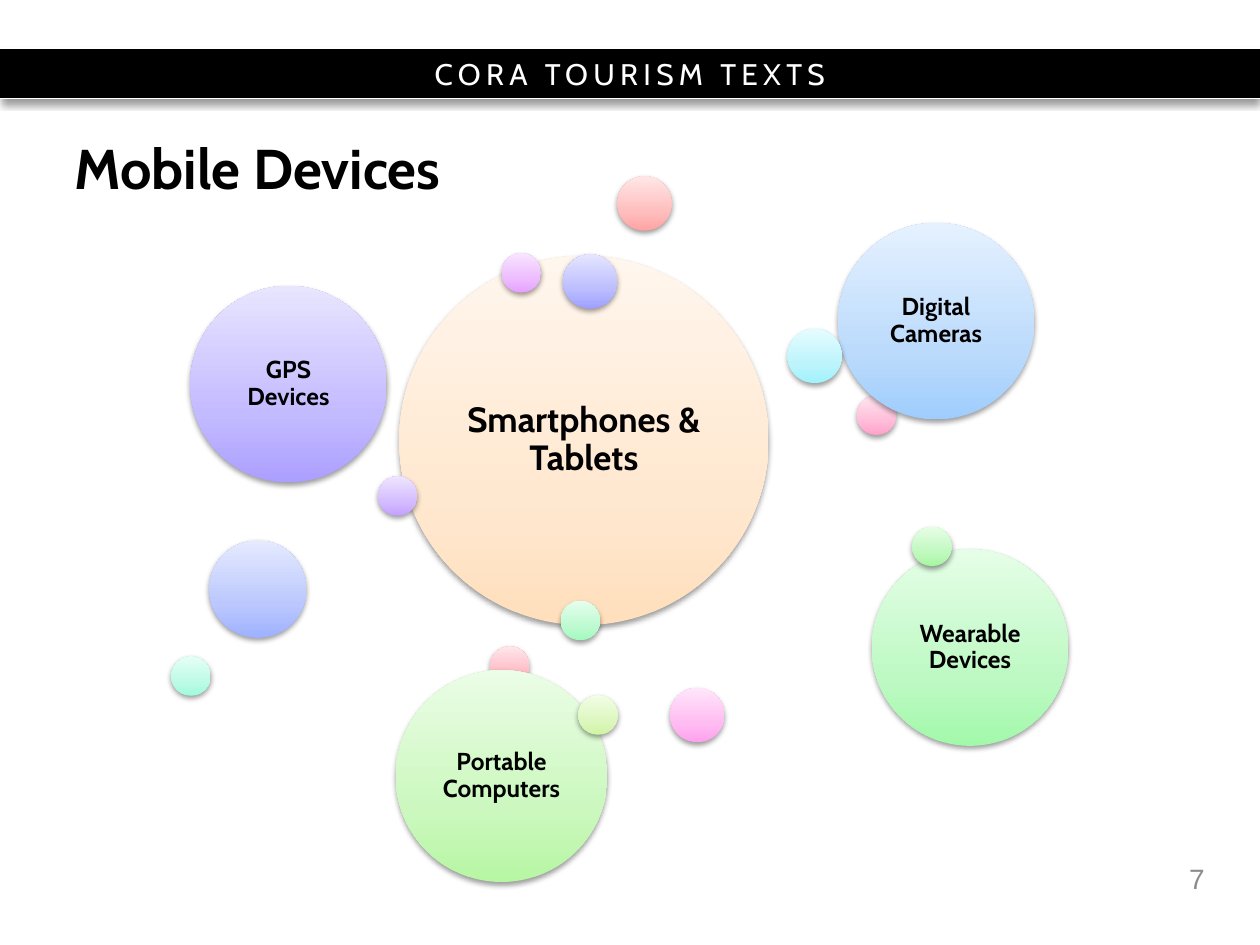
from dataclasses import dataclass

from lxml.etree import SubElement
from pptx import Presentation
from pptx.dml.color import RGBColor
from pptx.enum.shapes import MSO_CONNECTOR as Connector, MSO_SHAPE as Shape
from pptx.enum.text import MSO_ANCHOR as Anchor, PP_ALIGN as Align
from pptx.oxml.ns import qn
from pptx.util import Pt


@dataclass(frozen=True)
class Theme:
    font: str = "Cabin"
    number_font: str = "Arial"
    black: str = "000000"
    white: str = "FFFFFF"
    grey: str = "8C8C8C"
    title: int = 32
    main_label: int = 20
    banner: int = 17
    number: int = 16
    label: int = 14


THEME = Theme()
SLIDE_WIDTH, SLIDE_HEIGHT = 720, 540
BANNER_TOP, BANNER_HEIGHT = 27.4, 29

# Circle diameters
MAIN, LARGE, DEVICE, MEDIUM, SMALL, TINY = 211, 121, 112.3, 55.6, 31, 22.5

# left, top, diameter, gradient colours from bottom to top, label
CIRCLES = [
    (228.2, 146.2, MAIN, "FFDFBC FFE8D0 FFF6ED", "Smartphones & Tablets"),
    (352.8, 100.8, SMALL, "FFA3A3 FFBEBE FFE6E6", ""),
    (280.1, 369.4, TINY, "FFA2B0 FFBDC7 FFE6EA", ""),
    (489.6, 226.1, TINY, "FFA1CA FFBDD9 FFE6F0", ""),
    (383, 393.1, SMALL, "FFA1EE FFBCF2 FFE6FA", ""),
    (286.6, 144.7, TINY, "E6A0FF EDBCFF F8E5FF", ""),
    (216, 272.2, TINY, "C3A0FF D4BCFF EEE5FF", ""),
    (108.7, 163.4, DEVICE, "AB9FFF C3BBFF E8E5FF", "GPS Devices"),
    (321.8, 145.4, SMALL, "9FA0FF BBBDFE E5E5FF", ""),
    (119.5, 308.9, MEDIUM, "9EB1FF BCC8FD E5EAFF", ""),
    (478.8, 127.4, DEVICE, "9FCDFD BCDBFC E5F1FF", "Digital Cameras"),
    (450, 187.9, SMALL, "A0F2FC BDF4FC E5FCFF", ""),
    (97.9, 375.1, TINY, "A0FBDD BDFBE6 E5FFF6", ""),
    (320.4, 343.4, TINY, "A1FABE BEFAD1 E5FEED", ""),
    (498.2, 313.9, DEVICE, "A2F9AA BEF9C4 E5FEE7", "Wearable Devices"),
    (521.3, 301, TINY, "A6F7A2 C1F8BF E6FEE5", ""),
    (226.1, 383, LARGE, "B7F6A3 CCF8BF EBFDE6", "Portable Computers"),
    (330.5, 397.4, TINY, "D0F5A3 DDF7BF F2FDE6", ""),
]


def write(shape, text, size, align, color=THEME.black, font=THEME.font,
          bold=False, inset=0):
    """Put one formatted paragraph in a shape and return it."""
    frame = shape.text_frame
    frame.word_wrap = True
    frame.vertical_anchor = Anchor.MIDDLE
    frame.margin_left = frame.margin_right = Pt(inset)
    frame.margin_top = frame.margin_bottom = Pt(inset)
    paragraph = frame.paragraphs[0]
    paragraph.text = text
    paragraph.alignment = align
    paragraph.font.name = font
    paragraph.font.size = Pt(size)
    paragraph.font.bold = bold
    paragraph.font.color.rgb = RGBColor.from_string(color)
    return paragraph


def add_shadow(shape, opacity, blur, distance):
    """Replace the inherited shadow by a soft one straight below."""
    shape.shadow.inherit = False
    effects = shape.element.spPr.find(qn("a:effectLst"))
    shadow = SubElement(effects, qn("a:outerShdw"), blurRad=str(Pt(blur)),
                        dist=str(Pt(distance)), dir="5400000", rotWithShape="0")
    color = SubElement(shadow, qn("a:srgbClr"), val=THEME.black)
    SubElement(color, qn("a:alpha"), val=str(opacity * 1000))


def fill_gradient(shape, colors):
    """Fill a new shape with three stops running upwards."""
    gradient = SubElement(shape.element.spPr, qn("a:gradFill"), rotWithShape="1")
    stops = SubElement(gradient, qn("a:gsLst"))
    for position, color in zip((0, 35, 100), colors):
        stop = SubElement(stops, qn("a:gs"), pos=str(position * 1000))
        SubElement(stop, qn("a:srgbClr"), val=color)
    SubElement(gradient, qn("a:lin"), ang="16200000", scaled="0")


def add_rule(slide, y):
    rule = slide.shapes.add_connector(Connector.STRAIGHT, 0, Pt(y), Pt(SLIDE_WIDTH), Pt(y))
    rule.line.color.rgb = RGBColor.from_string(THEME.white)
    rule.line.width = Pt(0.75)
    SubElement(rule.element.spPr, qn("a:effectLst"))


def add_banner(slide, text):
    banner = slide.shapes.add_shape(Shape.RECTANGLE, 0, Pt(BANNER_TOP),
                                    Pt(SLIDE_WIDTH), Pt(BANNER_HEIGHT))
    banner.fill.solid()
    banner.fill.fore_color.rgb = RGBColor.from_string(THEME.black)
    banner.line.fill.background()
    add_shadow(banner, opacity=40, blur=4, distance=3)
    paragraph = write(banner, text, THEME.banner, Align.CENTER, THEME.white)
    paragraph.runs[0].font._element.set("spc", "300")
    for y in (BANNER_TOP, BANNER_TOP + BANNER_HEIGHT):
        add_rule(slide, y)


def set_title(slide, text):
    title = slide.shapes.title
    title.left, title.top, title.width, title.height = Pt(35.3), Pt(81.4), Pt(653.8), Pt(34.6)
    paragraph = write(title, text, THEME.title, Align.LEFT, bold=True)
    paragraph.line_spacing = Pt(THEME.title)
    title.text_frame.margin_left = title.text_frame.margin_right = Pt(7.2)


def add_circle(slide, left, top, diameter, colors, label):
    circle = slide.shapes.add_shape(Shape.OVAL, Pt(left), Pt(top), Pt(diameter), Pt(diameter))
    fill_gradient(circle, colors.split())
    circle.line.fill.background()
    add_shadow(circle, opacity=38, blur=3.1, distance=1.6)
    if label:
        size = THEME.main_label if diameter == MAIN else THEME.label
        paragraph = write(circle, label, size, Align.CENTER, bold=True, inset=size * 0.3)
        paragraph.line_spacing = 0.9


def add_slide_number(slide, number):
    box = slide.shapes.add_textbox(Pt(520.6), Pt(487.4), Pt(167.8), Pt(28.8))
    write(box, number, THEME.number, Align.RIGHT, THEME.grey, THEME.number_font)


def main():
    deck = Presentation()
    deck.slide_width, deck.slide_height = Pt(SLIDE_WIDTH), Pt(SLIDE_HEIGHT)
    slide = deck.slides.add_slide(deck.slide_layouts[5])

    # Heading
    add_banner(slide, "CORA TOURISM TEXTS")
    set_title(slide, "Mobile Devices")

    # Device circles, from back to front
    for circle in CIRCLES:
        add_circle(slide, *circle)

    # Footer
    add_slide_number(slide, "7")
    deck.save("out.pptx")


if __name__ == "__main__":
    main()
